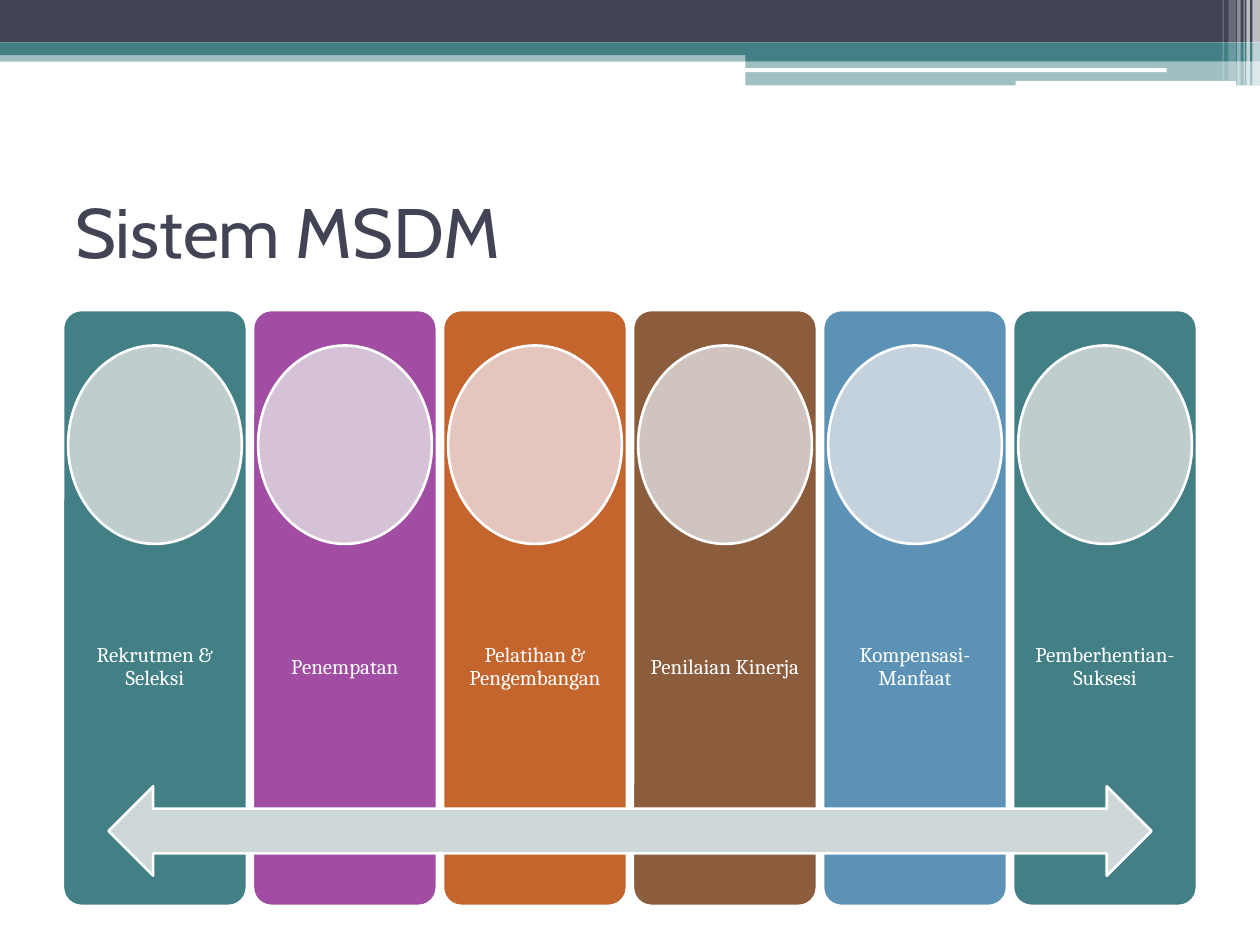
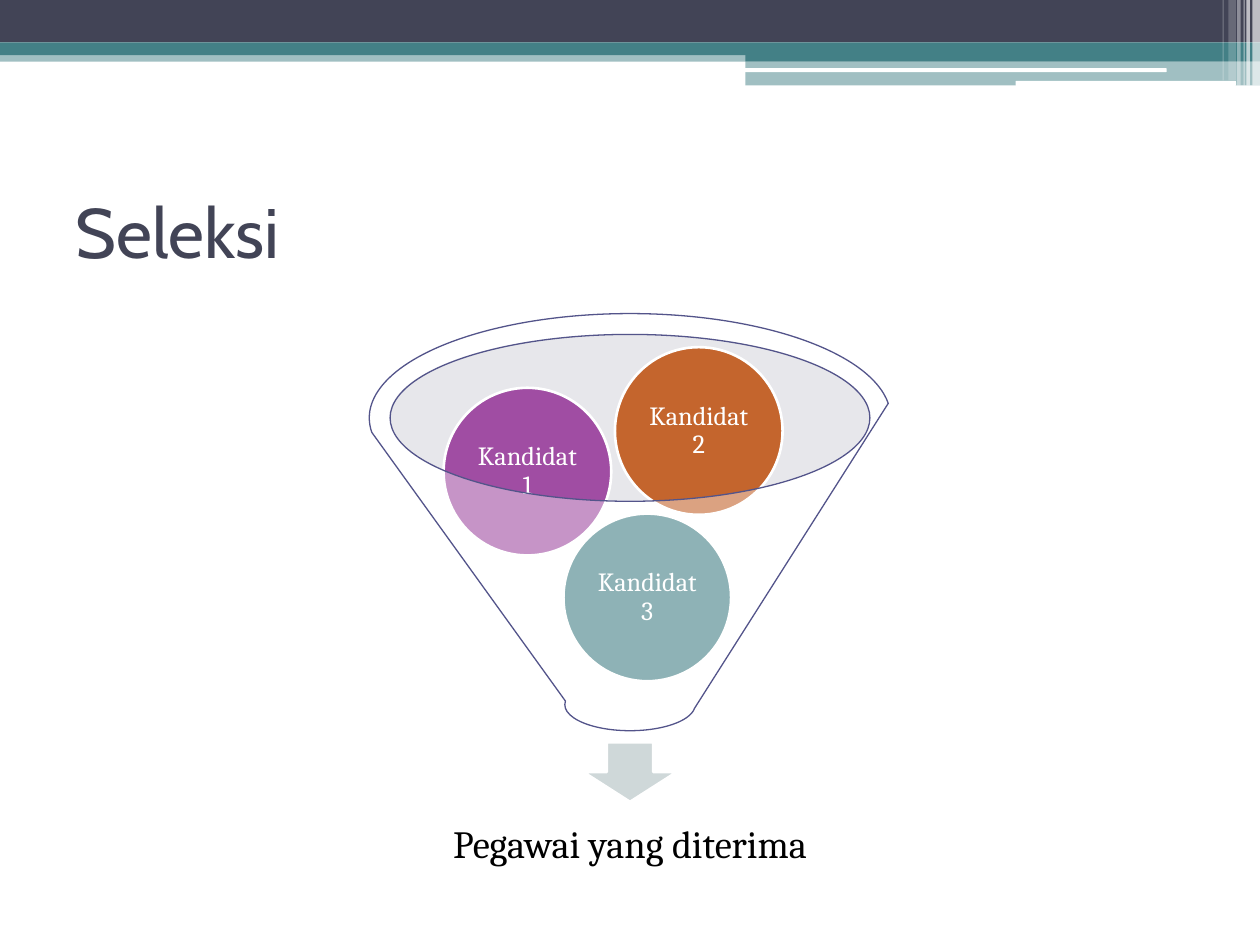
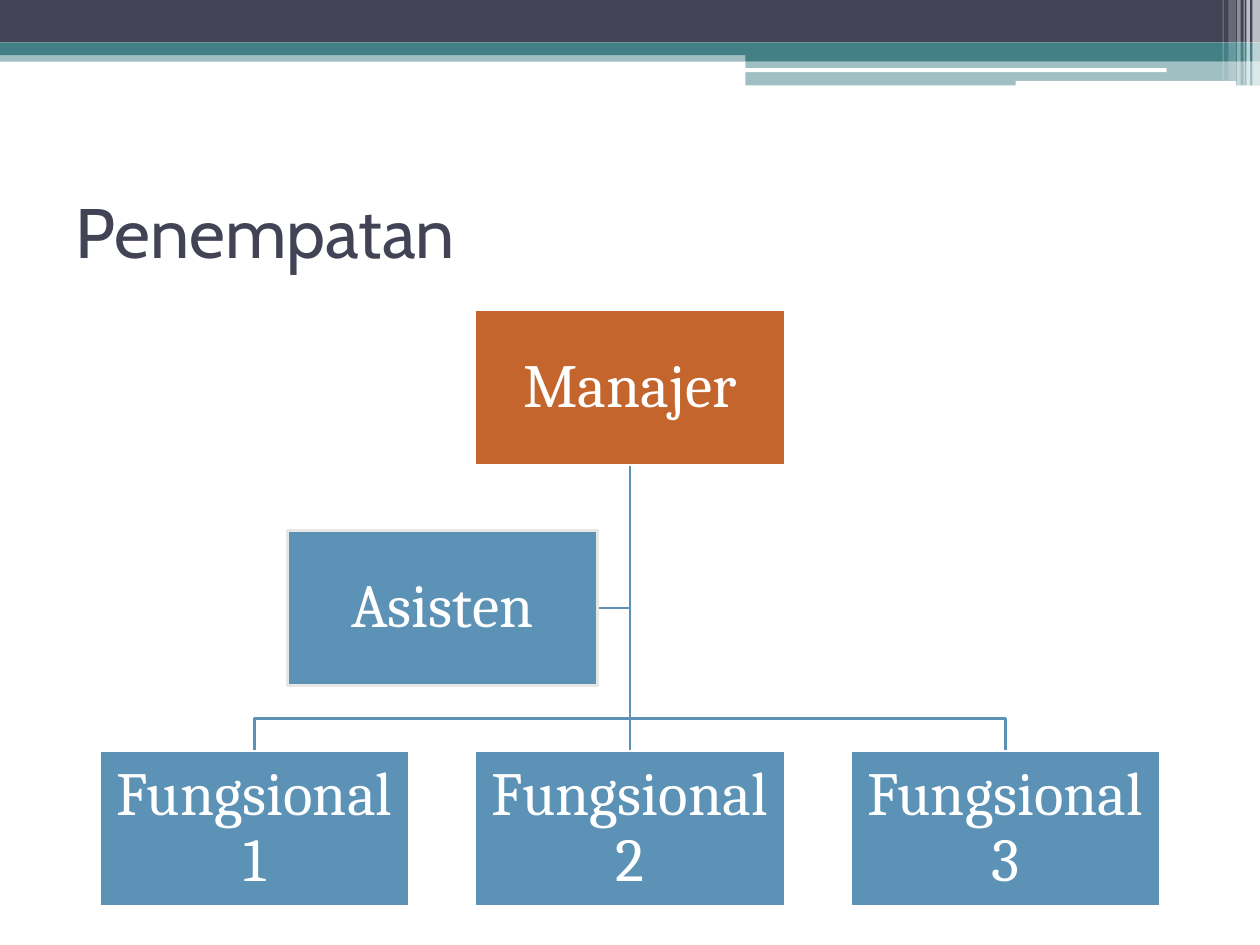
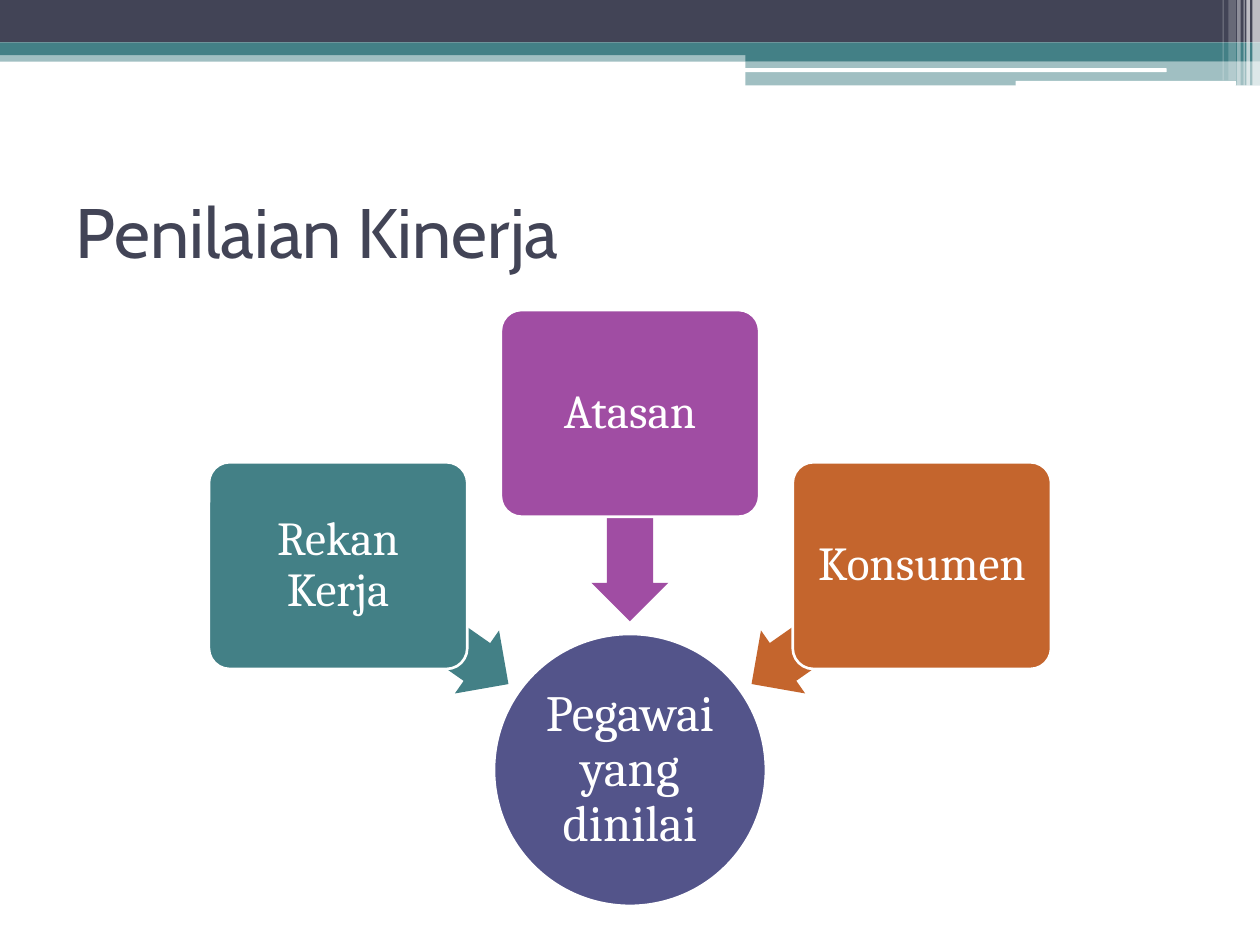
from lxml.etree import SubElement
from pptx import Presentation
from pptx.dml.color import RGBColor as RGB
from pptx.enum.shapes import MSO_CONNECTOR as Link, MSO_SHAPE as Kind
from pptx.enum.text import MSO_ANCHOR as Anchor, MSO_AUTO_SIZE as Fit, PP_ALIGN as Align
from pptx.oxml.ns import qn
from pptx.util import Pt

INK = RGB(0x42, 0x44, 0x56)
TEAL = RGB(0x43, 0x80, 0x86)
PURPLE = RGB(0xA0, 0x4D, 0xA3)
ORANGE = RGB(0xC4, 0x65, 0x2D)
BROWN = RGB(0x8B, 0x5D, 0x3D)
BLUE = RGB(0x5C, 0x92, 0xB5)
INDIGO = RGB(0x53, 0x54, 0x8A)
WHITE = RGB(0xFF, 0xFF, 0xFF)
BLACK = RGB(0, 0, 0)
MIST = RGB(0xCF, 0xD8, 0xD9)
HAZE = RGB(0xC3, 0xC3, 0xCF)
SILVER = RGB(0xE7, 0xE7, 0xE7)
PALE_TEAL = RGB(0xC0, 0xCD, 0xCE)
PALE_PURPLE = RGB(0xD6, 0xC2, 0xD7)
PALE_ORANGE = RGB(0xE4, 0xC6, 0xBE)
PALE_BROWN = RGB(0xD0, 0xC4, 0xC0)
PALE_BLUE = RGB(0xC4, 0xD2, 0xDE)

HEAD, BODY = "Cabin", "Cambria"
WIDE, HIGH = 720, 540
LEFT, TOP, BOTTOM = 36, 177.2, 517.7

# kind, left, top, width, height, colour, opacity
BANDS = [
    (Kind.RECTANGLE, 0, 28.8, WIDE, 6.5, TEAL, 50),
    (Kind.RECTANGLE, 0, 0, WIDE, 24.3, INK, 100),
    (Kind.RECTANGLE, 0, 24.3, WIDE, 7.2, TEAL, 100),
    (Kind.RECTANGLE, 426, 28, 294, 7, TEAL, 100),
    (Kind.RECTANGLE, 426, 35, 294, 13.9, TEAL, 50),
    (Kind.ROUNDED_RECTANGLE, 425.5, 39, 241.2, 2.2, WHITE, 100),
    (Kind.ROUNDED_RECTANGLE, 580.3, 46.2, 126, 2.9, WHITE, 100),
    (Kind.RECTANGLE, 715.7, 0, 4.3, 49, WHITE, 65),
    (Kind.RECTANGLE, 712.2, 0, 2, 49, WHITE, 65),
    (Kind.RECTANGLE, 710.6, 0, 0.7, 49, WHITE, 60),
    (Kind.RECTANGLE, 707, 0, 2, 49, WHITE, 40),
    (Kind.RECTANGLE, 702, 0, 4.3, 46, WHITE, 20),
    (Kind.RECTANGLE, 698.6, 0, 0.7, 46, WHITE, 30),
]


def write(shape, text, size, color=WHITE, font=BODY, align=Align.CENTER,
          space=0.9, inset=(1.5, 1.5, 1.5, 1.5)):
    """Put one paragraph in a shape; inset is left, top, right, bottom."""
    frame = shape.text_frame
    frame.text = text
    frame.word_wrap = True
    frame.auto_size = Fit.NONE
    frame.vertical_anchor = Anchor.MIDDLE
    (frame.margin_left, frame.margin_top,
     frame.margin_right, frame.margin_bottom) = map(Pt, inset)
    para = frame.paragraphs[0]
    para.alignment = align
    para.line_spacing = space
    face = para.runs[0].font
    face.name, face.size, face.color.rgb = font, Pt(size), color


class Deck:
    def __init__(self):
        self.file = Presentation()
        self.file.slide_width, self.file.slide_height = Pt(WIDE), Pt(HIGH)
        self.layout = self.file.slide_layouts[5]
        self.slide = None

    def start(self, title):
        first = self.slide is None
        self.slide = self.file.slides.add_slide(self.layout)
        if first:
            self.dress()
        head = self.slide.shapes.title
        head.left, head.top, head.width, head.height = map(Pt, (LEFT, 90, 648, 84))
        write(head, title, 40, color=INK, font=HEAD, align=Align.LEFT,
              space=1, inset=(7.2, 3.6, 7.2, 3.6))

    def dress(self):
        """Give the layout the top bands in place of its footers."""
        for item in list(self.layout.placeholders)[1:]:
            item.element.getparent().remove(item.element)
        bands = [self.shape(kind, *box, fill, alpha=alpha)
                 for kind, *box, fill, alpha in BANDS]
        for band in bands:
            self.layout.shapes.element.append(band.element)

    def shape(self, kind, x, y, w, h, fill, line=None, weight=1.5, alpha=100,
              adjust=(), turn=0):
        item = self.slide.shapes.add_shape(kind, Pt(x), Pt(y), Pt(w), Pt(h))
        item.shadow.inherit = False
        item.rotation = turn
        for i, value in enumerate(adjust):
            item.adjustments[i] = value
        item.fill.solid()
        item.fill.fore_color.rgb = fill
        if alpha < 100:
            tint = item.element.spPr.find(qn("a:solidFill")).find(qn("a:srgbClr"))
            SubElement(tint, qn("a:alpha")).set("val", str(alpha * 1000))
        if line is None:
            item.line.fill.background()
        else:
            item.line.color.rgb = line
            item.line.width = Pt(weight)
        return item

    def label(self, text, x, y, w, h, **style):
        box = self.slide.shapes.add_textbox(Pt(x), Pt(y), Pt(w), Pt(h))
        write(box, text, **style)

    def bend(self, *points):
        """Draw an open line with corners."""
        start, *rest = [(Pt(x), Pt(y)) for x, y in points]
        build = self.slide.shapes.build_freeform(*start)
        build.add_line_segments(rest, close=False)
        item = build.convert_to_shape()
        item.shadow.inherit = False
        item.fill.background()
        item.line.color.rgb, item.line.width = BLUE, Pt(1.5)

    def line(self, x1, y1, x2, y2):
        item = self.slide.shapes.add_connector(
            Link.STRAIGHT, Pt(x1), Pt(y1), Pt(x2), Pt(y2))
        item.line.color.rgb, item.line.width = BLUE, Pt(1.5)
        SubElement(item.element.spPr, qn("a:effectLst"))


def system(deck):
    deck.start("Sistem MSDM")
    stages = [
        ("Rekrutmen & Seleksi", TEAL, PALE_TEAL),
        ("Penempatan", PURPLE, PALE_PURPLE),
        ("Pelatihan & Pengembangan", ORANGE, PALE_ORANGE),
        ("Penilaian Kinerja", BROWN, PALE_BROWN),
        ("Kompensasi-Manfaat", BLUE, PALE_BLUE),
        ("Pemberhentian-Suksesi", TEAL, PALE_TEAL),
    ]
    wide, step = 105.1, 108.58
    for i, (name, dark, pale) in enumerate(stages):
        x = LEFT + i * step
        bar = deck.shape(Kind.ROUNDED_RECTANGLE, x, TOP, wide, BOTTOM - TOP,
                         dark, WHITE, adjust=[0.1])
        write(bar, name, 12, inset=(3.4, 139.5, 3.4, 71.8))
        deck.shape(Kind.OVAL, x + 2.9, 197.4, 99.3, 113.4, pale, WHITE)
    deck.shape(Kind.LEFT_RIGHT_ARROW, 62, 449.3, 596, 51.1, MIST, WHITE)


def funnel(deck):
    deck.start("Seleksi")
    deck.shape(Kind.OVAL, 222.5, 190.8, 274.5, 95.2, HAZE, alpha=40)
    deck.shape(Kind.DOWN_ARROW, 333.4, 424.2, 53.2, 34, MIST, WHITE)
    deck.label("Pegawai yang diterima", 232.3, 451.4, 255.4, 63.9,
               size=22, color=BLACK, inset=(12.3,) * 4)
    size = 95.8
    for num, x, y, fill in [(3, 322, 293.5, TEAL), (1, 253.5, 221.6, PURPLE),
                            (2, 351.4, 198.4, ORANGE)]:
        ball = deck.shape(Kind.OVAL, x, y, size, size, fill, WHITE)
        write(ball, f"Kandidat {num}", 15)
    deck.shape(Kind.FUNNEL, 211, 179.2, 298, 238.4, WHITE, INDIGO, 0.75, alpha=40)


def chart(deck):
    deck.start("Penempatan")
    wide, high, step = 177.2, 88.6, 214.5
    mid, low = WIDE / 2, BOTTOM - high
    left, foot, bus = mid - wide / 2, TOP + high, 410.4
    aide = (164.2, 303.2)
    side = aide[1] + high / 2
    deck.bend((mid, foot), (mid, side), (aide[0] + wide, side))
    deck.line(mid, foot, mid, low)
    for end in (mid + step, mid - step):
        deck.bend((mid, foot), (mid, bus), (end, bus), (end, low))
    boxes = [("Manajer", left, TOP, ORANGE, WHITE)]
    boxes += [(f"Fungsional {i + 1}", left + (i - 1) * step, low, BLUE, WHITE)
              for i in range(3)]
    boxes.append(("Asisten", *aide, BLUE, SILVER))
    for name, x, y, fill, edge in boxes:
        box = deck.shape(Kind.RECTANGLE, x, y, wide, high, fill, edge)
        write(box, name, 35)


def review(deck):
    deck.start("Penilaian Kinerja")
    size = 155.4
    hub = deck.shape(Kind.OVAL, (WIDE - size) / 2, BOTTOM - size, size, size,
                     INDIGO, WHITE)
    write(hub, "Pegawai yang dinilai", 29)
    wide, high = 147.6, 118.1
    mid, reach = WIDE / 2, 166.8
    raters = [
        ("Rekan Kerja", -1, 264.2, TEAL, 334.8, 215),
        ("Atasan", 0, TOP, PURPLE, 273.6, 270),
        ("Konsumen", 1, 264.2, ORANGE, 334.8, 325),
    ]
    for name, side, y, fill, tip, turn in raters:
        deck.shape(Kind.LEFT_ARROW, mid + side * 118.1 - 59.4, tip, 118.8, 44,
                   fill, adjust=[0.6, 0.5], turn=turn)
        card = deck.shape(Kind.ROUNDED_RECTANGLE, mid + side * reach - wide / 2, y,
                          wide, high, fill, WHITE, adjust=[0.1])
        write(card, name, 27, inset=(4.3,) * 4)


def main():
    deck = Deck()
    for build in (system, funnel, chart, review):
        build(deck)
    deck.file.save("out.pptx")


if __name__ == "__main__":
    main()
